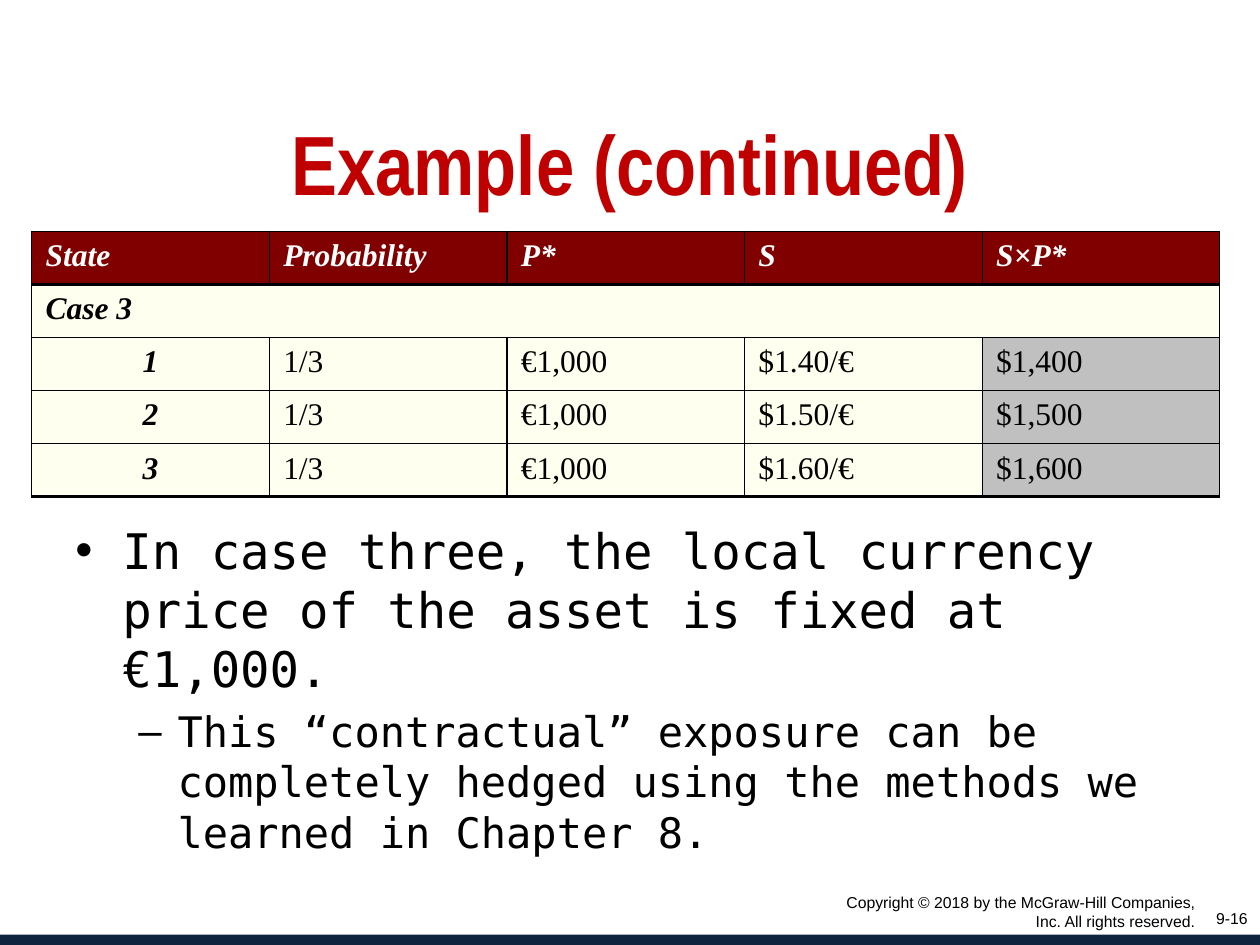
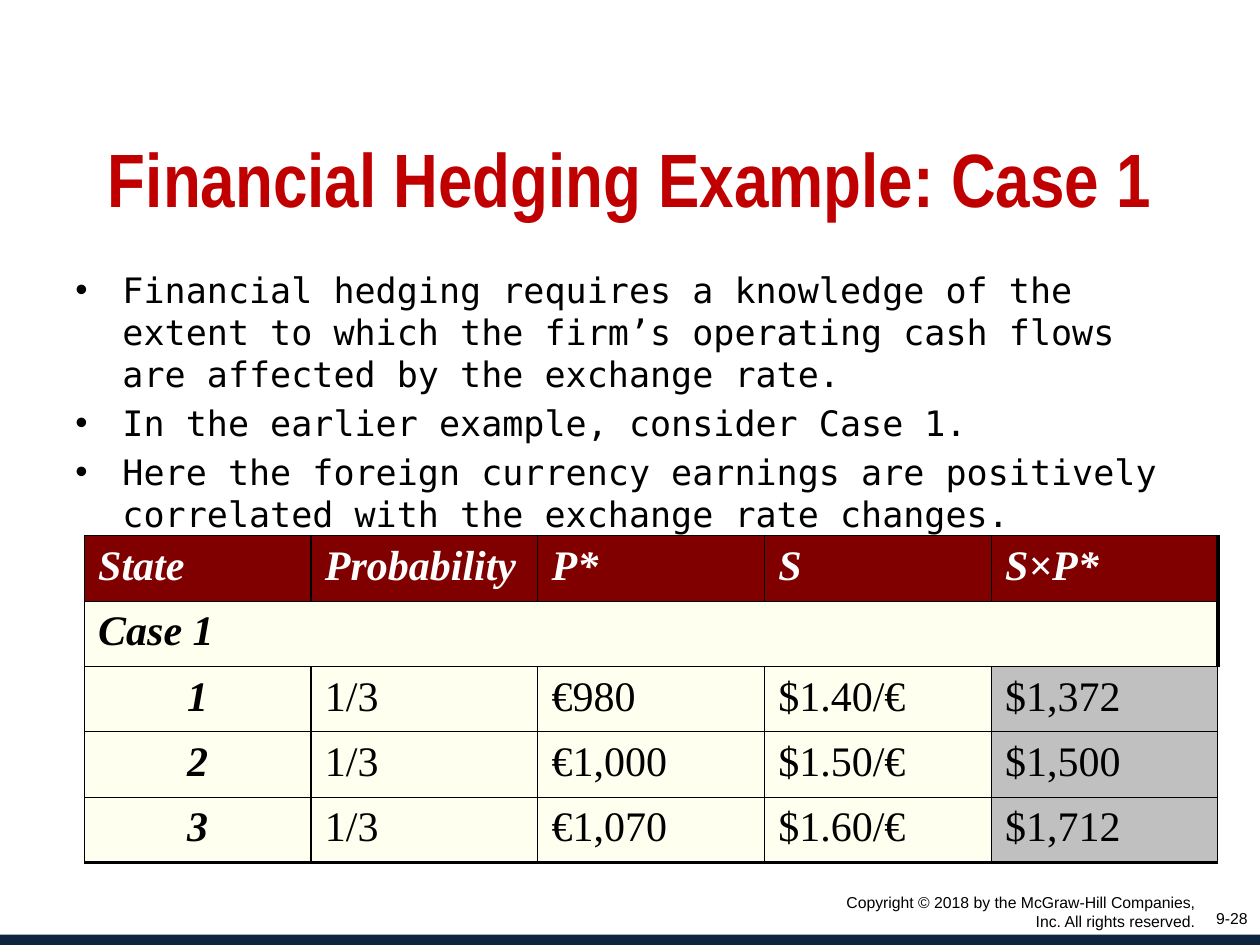
from lxml.etree import SubElement
from pptx import Presentation
from pptx.dml.color import RGBColor
from pptx.enum.shapes import MSO_SHAPE
from pptx.enum.text import MSO_ANCHOR, PP_ALIGN
from pptx.oxml.ns import qn
from pptx.util import Cm, Pt

BLACK = RGBColor(0x00, 0x00, 0x00)
WHITE = RGBColor(0xFF, 0xFF, 0xFF)
TITLE_RED = RGBColor(0xC0, 0x00, 0x00)
HEADER_MAROON = RGBColor(0x80, 0x00, 0x00)
CELL_CREAM = RGBColor(0xFF, 0xFF, 0xEF)
RESULT_GREY = RGBColor(0xC0, 0xC0, 0xC0)
BAND_NAVY = RGBColor(0x0F, 0x24, 0x3E)

TITLE_FONT = "Arial Narrow"
BODY_FONT = "DejaVu Sans Mono"
TABLE_FONT = "Times New Roman"
FOOTER_FONT = "Arial"

COPYRIGHT = "Copyright © 2018 by the McGraw-Hill Companies, Inc. All rights reserved."
HEADERS = ["State", "Probability", "P*", "S", "S×P*"]
THIN = 0.75
# Bullet sign, left margin and hanging indent for each outline level
BULLETS = [("•", Cm(0.95), Cm(-0.95)), ("–", Cm(2.06), Cm(-0.79))]


def add_run(paragraph, text, font, size, color, bold=False, italic=False):
    run = paragraph.add_run()
    run.text = text
    run.font.name = font
    run.font.size = Pt(size)
    run.font.color.rgb = color
    run.font.bold = bold
    run.font.italic = italic


def add_text_frame(slide, left, top, width, height):
    box = slide.shapes.add_textbox(Cm(left), Cm(top), Cm(width), Cm(height))
    box.text_frame.word_wrap = True
    return box.text_frame


def add_title(slide, text, top, height, size):
    frame = add_text_frame(slide, 1.27, top, 22.86, height)
    paragraph = frame.paragraphs[0]
    paragraph.alignment = PP_ALIGN.CENTER
    add_run(paragraph, text, TITLE_FONT, size, TITLE_RED, bold=True)


def set_bullet(paragraph, level):
    sign, margin, indent = BULLETS[level]
    paragraph.level = level
    properties = paragraph._p.get_or_add_pPr()
    properties.set("marL", str(margin))
    properties.set("indent", str(indent))
    SubElement(properties, qn("a:buFont"), typeface="Arial")
    SubElement(properties, qn("a:buChar"), char=sign)


def add_bullets(slide, top, height, items):
    """Each item is (level, size, text)."""
    frame = add_text_frame(slide, 1.27, top, 22.86, height)
    for index, (level, size, text) in enumerate(items):
        paragraph = frame.add_paragraph() if index else frame.paragraphs[0]
        set_bullet(paragraph, level)
        if index:
            paragraph.space_before = Pt(size * 0.2)
        add_run(paragraph, text, BODY_FONT, size, BLACK)


def set_border(cell, side, width):
    line = SubElement(cell._tc.get_or_add_tcPr(), qn(f"a:ln{side}"), w=str(Pt(width)))
    fill = SubElement(line, qn("a:solidFill"))
    SubElement(fill, qn("a:srgbClr"), val=str(BLACK))


def fill_cell(cell, text, size, background, color=BLACK, strong=False):
    cell.margin_left = cell.margin_right = Cm(0.28)
    cell.margin_top = cell.margin_bottom = Cm(0.15)
    cell.fill.solid()
    cell.fill.fore_color.rgb = background
    add_run(cell.text_frame.paragraphs[0], text, TABLE_FONT, size, color, strong, strong)


def add_case_table(slide, left, top, column_width, row_height, size, case, states, heavy):
    """heavy maps (row, side) to the width of a border that is not thin."""
    row_count, column_count = len(states) + 2, len(HEADERS)
    last = column_count - 1
    table = slide.shapes.add_table(
        row_count, column_count, Cm(left), Cm(top),
        Cm(column_width * column_count), Cm(row_height * row_count)).table
    for column in table.columns:
        column.width = Cm(column_width)
    for row in table.rows:
        row.height = Cm(row_height)
    table.cell(1, 0).merge(table.cell(1, last))

    for row in range(row_count):
        for column in range(column_count):
            cell = table.cell(row, column)
            if cell.is_spanned:
                continue
            at_right_edge = column == last or cell.is_merge_origin
            for side in "LRTB":
                inner = side == "R" and not at_right_edge
                set_border(cell, side, THIN if inner else heavy.get((row, side), THIN))

    for column, header in enumerate(HEADERS):
        fill_cell(table.cell(0, column), header, size, HEADER_MAROON, WHITE, True)
    fill_cell(table.cell(1, 0), case, size, CELL_CREAM, strong=True)
    for row, values in enumerate(states, 2):
        for column, value in enumerate(values):
            background = RESULT_GREY if column == last else CELL_CREAM
            fill_cell(table.cell(row, column), value, size, background, strong=column == 0)
        table.cell(row, 0).text_frame.paragraphs[0].alignment = PP_ALIGN.CENTER


def add_footer_text(frame, text):
    paragraph = frame.paragraphs[0]
    paragraph.alignment = PP_ALIGN.RIGHT
    add_run(paragraph, text, FOOTER_FONT, 9, BLACK)


def add_slide(presentation):
    slide = presentation.slides.add_slide(presentation.slide_layouts[6])
    band = slide.shapes.add_shape(
        MSO_SHAPE.RECTANGLE, 0, Cm(18.84), presentation.slide_width, Cm(0.25))
    band.shadow.inherit = False
    band.fill.solid()
    band.fill.fore_color.rgb = BAND_NAVY
    band.line.fill.background()
    return slide


def add_footer(slide, number):
    add_footer_text(add_text_frame(slide, 24.13, 18.2, 1.27, 0.85), number)
    frame = add_text_frame(slide, 16.3, 17.99, 8.04, 1.14)
    frame.vertical_anchor = MSO_ANCHOR.MIDDLE
    frame.margin_bottom = Cm(0.48)
    add_footer_text(frame, COPYRIGHT)


def add_contractual_exposure_slide(presentation):
    slide = add_slide(presentation)
    add_title(slide, "Example (continued)", 2.12, 3.18, 48)
    add_bullets(slide, 10.37, 7.49, [
        (0, 28, "In case three, the local currency price of the asset is fixed at €1,000."),
        (1, 24, "This “contractual” exposure can be completely hedged using the "
                "methods we learned in Chapter 8."),
    ])
    add_case_table(slide, 0.64, 4.66, 4.79, 1.07, 18, "Case 3", [
        ("1", "1/3", "€1,000", "$1.40/€", "$1,400"),
        ("2", "1/3", "€1,000", "$1.50/€", "$1,500"),
        ("3", "1/3", "€1,000", "$1.60/€", "$1,600"),
    ], {(0, "B"): 2, (1, "T"): 2, (4, "B"): 2})
    add_footer(slide, "9-16")


def add_financial_hedging_slide(presentation):
    slide = add_slide(presentation)
    add_title(slide, "Financial Hedging Example: Case 1", 2.54, 2.75, 43.2)
    add_bullets(slide, 5.29, 5.72, [
        (0, 20, "Financial hedging requires a knowledge of the extent to which the "
                "firm’s operating cash flows are affected by the exchange rate."),
        (0, 20, "In the earlier example, consider Case 1."),
        (0, 20, "Here the foreign currency earnings are positively correlated with "
                "the exchange rate changes."),
    ])
    add_case_table(slide, 1.7, 10.8, 4.57, 1.3, 24, "Case 1", [
        ("1", "1/3", "€980", "$1.40/€", "$1,372"),
        ("2", "1/3", "€1,000", "$1.50/€", "$1,500"),
        ("3", "1/3", "€1,070", "$1.60/€", "$1,712"),
    ], {(0, "R"): 2.25, (1, "R"): 2.25, (4, "B"): 2})
    add_footer(slide, "9-28")


def main():
    presentation = Presentation()
    presentation.slide_width = Cm(25.4)
    presentation.slide_height = Cm(19.05)
    add_contractual_exposure_slide(presentation)
    add_financial_hedging_slide(presentation)
    presentation.save("out.pptx")


if __name__ == "__main__":
    main()
